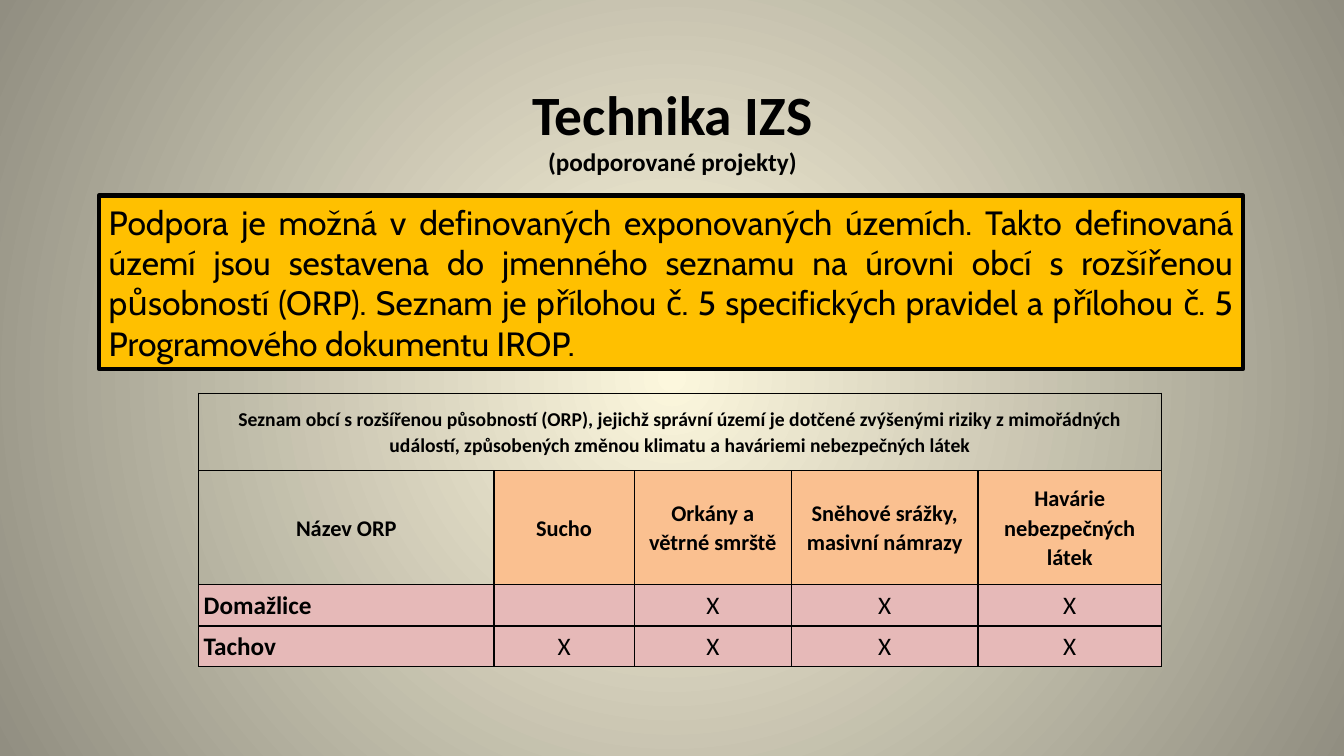
from lxml.etree import SubElement
from pptx import Presentation
from pptx.dml.color import RGBColor
from pptx.enum.shapes import MSO_SHAPE
from pptx.enum.text import MSO_ANCHOR, MSO_AUTO_SIZE, PP_ALIGN
from pptx.oxml.ns import qn
from pptx.util import Inches, Pt

BLACK = RGBColor(0x00, 0x00, 0x00)
CREAM = RGBColor(0xFC, 0xF7, 0xDD)
TAUPE = RGBColor(0x91, 0x8E, 0x81)
AMBER = RGBColor(0xFF, 0xC0, 0x00)
PEACH = RGBColor(0xFA, 0xC0, 0x90)
PINK = RGBColor(0xE6, 0xB9, 0xB8)


def format_text(p, size, bold, font="Calibri"):
    for r in p.runs:
        r.font.name = font
        r.font.size = Pt(size)
        r.font.bold = bold
        r.font.color.rgb = BLACK


def add_borders(cell):
    tcPr = cell._tc.get_or_add_tcPr()
    for i, side in enumerate(("a:lnL", "a:lnR", "a:lnT", "a:lnB")):
        ln = SubElement(tcPr, qn(side), w=str(Pt(1)))
        fill = SubElement(ln, qn("a:solidFill"))
        SubElement(fill, qn("a:srgbClr"), val=str(BLACK))
        tcPr.insert(i, ln)


prs = Presentation()
prs.slide_width, prs.slide_height = Inches(13.33), Inches(7.5)
slide = prs.slides.add_slide(prs.slide_layouts[5])

# Radial background
bg = slide.background.fill
bg.gradient()
for stop, color in zip(bg.gradient_stops, (CREAM, TAUPE)):
    stop.color.rgb = color
grad = slide.element.find(".//" + qn("a:gradFill"))
grad.remove(grad.find(qn("a:lin")))
circle = SubElement(grad, qn("a:path"), path="circle")
SubElement(circle, qn("a:fillToRect"), l="50000", t="50000", r="50000", b="50000")

# Title
title = slide.shapes.title
title.left, title.top = Inches(0.92), Inches(0.21)
title.width, title.height = Inches(11.5), Inches(1.45)
tf = title.text_frame
tf.text = "Technika IZS\n(podporované projekty)"
tf.auto_size = MSO_AUTO_SIZE.NONE
tf.vertical_anchor = MSO_ANCHOR.TOP
tf.margin_top, tf.margin_bottom = Inches(0.58), 0
for p, size in zip(tf.paragraphs, (39.6, 18)):
    p.alignment = PP_ALIGN.CENTER
    format_text(p, size, True)

# Support condition
box = slide.shapes.add_shape(
    MSO_SHAPE.RECTANGLE, Inches(0.98), Inches(1.94), Inches(11.35), Inches(1.72))
box.shadow.inherit = False
box.fill.solid()
box.fill.fore_color.rgb = AMBER
box.line.color.rgb = BLACK
box.line.width = Pt(3)
tf = box.text_frame
tf.word_wrap = True
tf.auto_size = MSO_AUTO_SIZE.SHAPE_TO_FIT_TEXT
p = tf.paragraphs[0]
p.text = (
    "Podpora je možná v definovaných exponovaných územích. Takto definovaná "
    "území jsou sestavena do jmenného seznamu na úrovni obcí s rozšířenou "
    "působností (ORP). Seznam je přílohou č. 5 specifických pravidel "
    "a přílohou č. 5 Programového dokumentu IROP.")
p.alignment = PP_ALIGN.JUSTIFY
format_text(p, 24, False, "Cabin")

# Table of municipalities and risks
ROWS = [
    ["Seznam obcí s rozšířenou působností (ORP), jejichž správní území je "
     "dotčené zvýšenými riziky z mimořádných událostí, způsobených změnou "
     "klimatu a haváriemi nebezpečných látek", "", "", "", ""],
    ["Název ORP", "Sucho", "Orkány a větrné smrště",
     "Sněhové srážky, masivní námrazy", "Havárie nebezpečných látek"],
    ["Domažlice", "", "X", "X", "X"],
    ["Tachov", "X", "X", "X", "X"],
]
COL_WIDTHS = (2.93, 1.39, 1.56, 1.85, 1.82)
ROW_HEIGHTS = (0.77, 1.13, 0.41, 0.4)
SIZES = (14, 16, 18, 18)

table = slide.shapes.add_table(
    len(ROWS), len(COL_WIDTHS), Inches(1.97), Inches(3.9),
    Inches(sum(COL_WIDTHS)), Inches(sum(ROW_HEIGHTS))).table
table.first_row = table.horz_banding = False
for col, width in zip(table.columns, COL_WIDTHS):
    col.width = Inches(width)
for row, height in zip(table.rows, ROW_HEIGHTS):
    row.height = Inches(height)
table.cell(0, 0).merge(table.cell(0, 4))

for i, texts in enumerate(ROWS):
    is_data = i > 1
    for j, text in enumerate(texts):
        cell = table.cell(i, j)
        cell.vertical_anchor = MSO_ANCHOR.MIDDLE
        cell.margin_left = cell.margin_right = Inches(0.05)
        cell.margin_top = cell.margin_bottom = 0
        if is_data or (i == 1 and j > 0):
            cell.fill.solid()
            cell.fill.fore_color.rgb = PINK if is_data else PEACH
        else:
            cell.fill.background()
        add_borders(cell)
        if not text:
            continue
        p = cell.text_frame.paragraphs[0]
        p.text = text
        p.alignment = PP_ALIGN.LEFT if is_data and j == 0 else PP_ALIGN.CENTER
        p.line_spacing = 1.07
        p.space_before = p.space_after = Pt(2.4 if is_data else 6)
        format_text(p, SIZES[i], not is_data or j == 0)

prs.save("out.pptx")
